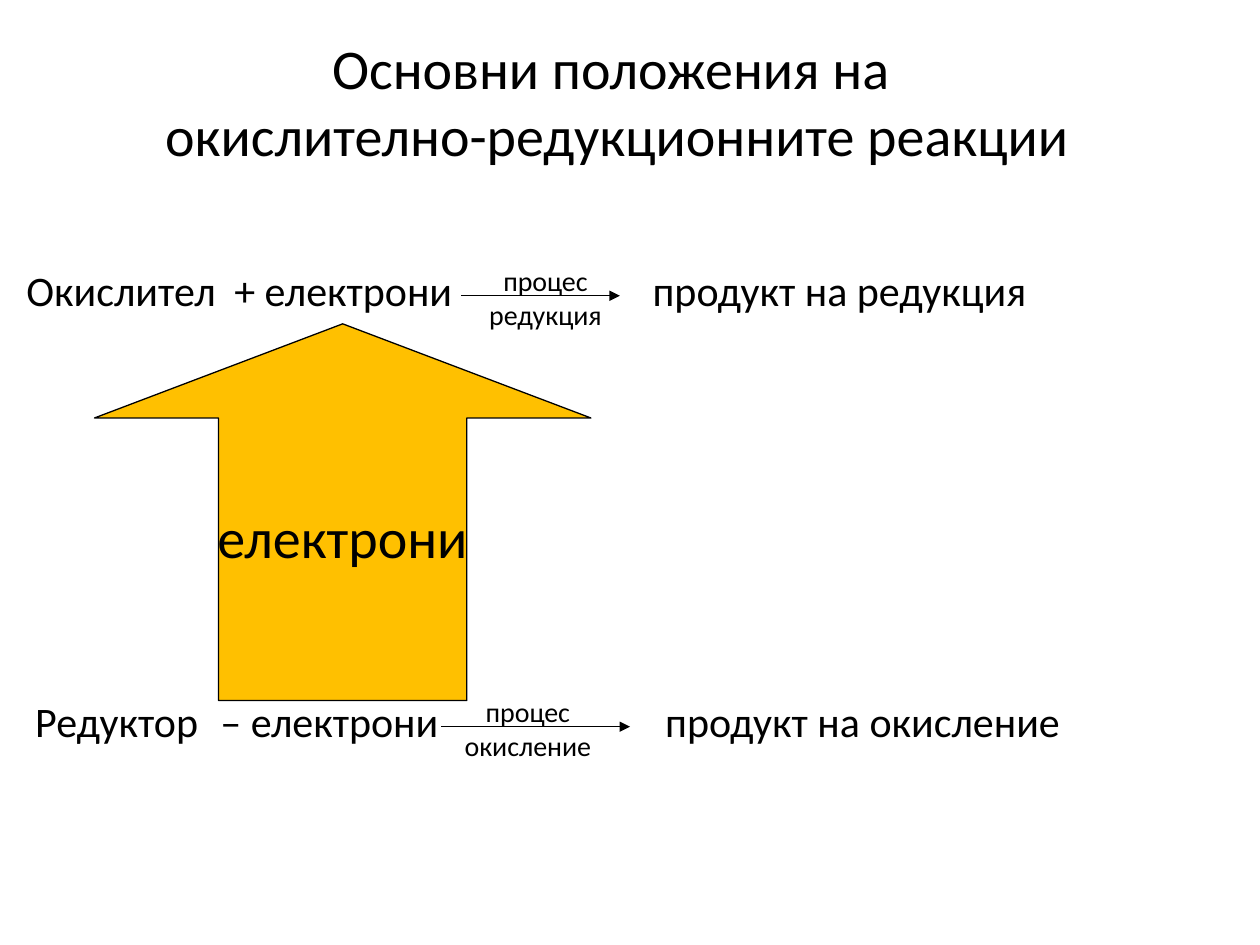
from lxml import etree
from pptx import Presentation
from pptx.dml.color import RGBColor
from pptx.enum.shapes import MSO_CONNECTOR, MSO_SHAPE
from pptx.enum.text import MSO_ANCHOR, PP_ALIGN
from pptx.oxml.ns import qn
from pptx.util import Inches, Pt

UP_ARROW, STRAIGHT = MSO_SHAPE.UP_ARROW, MSO_CONNECTOR.STRAIGHT
CENTER, LEFT, MIDDLE = PP_ALIGN.CENTER, PP_ALIGN.LEFT, MSO_ANCHOR.MIDDLE
COLORS = {"text": "000000", "line": "000000", "arrow": "FFC000"}
FONT = "Calibri"
WIDTH, HEIGHT = Inches(10), Inches(7.5)
COLS, ROWS = 100, 75


def rgb(name):
    """Return a named colour."""
    return RGBColor.from_string(COLORS[name])


def x(cols):
    """Turn grid columns into a length."""
    return round(WIDTH * cols / COLS)


def y(rows):
    """Turn grid rows into a length."""
    return round(HEIGHT * rows / ROWS)


def place(box):
    """Turn a left, top, width, height grid box into lengths."""
    left, top, width, height = box
    return x(left), y(top), x(width), y(height)


def write(shape, lines, size, align=CENTER, wrap=True, tabs=()):
    """Fill a shape with one paragraph per line, centred vertically."""
    tf = shape.text_frame
    frame = {"word_wrap": wrap, "vertical_anchor": MIDDLE, "margin_left": 0,
             "margin_right": 0, "margin_top": 0, "margin_bottom": 0}
    for key, value in frame.items():
        setattr(tf, key, value)
    for i, line in enumerate(lines):
        p = tf.add_paragraph() if i else tf.paragraphs[0]
        p.alignment = align
        if tabs:
            stops = etree.SubElement(p._p.get_or_add_pPr(), qn("a:tabLst"))
            for tab in tabs:
                etree.SubElement(stops, qn("a:tab"), pos=str(x(tab)), algn="l")
        p.text = line
        for r in p.runs:
            for key, value in {"name": FONT, "size": Pt(size)}.items():
                setattr(r.font, key, value)
            r.font.color.rgb = rgb("text")


def outline(shape):
    """Give a shape or connector its thin line."""
    shape.line.color.rgb = rgb("line")
    shape.line.width = Pt(0.75)


def add_title(s, box):
    """Place the two-line title."""
    write(s.shapes.add_textbox(*place(box)),
          ["Основни положения на ", "окислително-редукционните реакции"], 32)


def add_electron_arrow(s, box):
    """Place the block arrow of the electron flow."""
    arrow = s.shapes.add_shape(UP_ARROW, *place(box))
    arrow.shadow.inherit = False
    arrow.fill.solid()
    arrow.fill.fore_color.rgb = rgb("arrow")
    outline(arrow)
    arrow.adjustments[0], arrow.adjustments[1] = 0.5, 0.25
    write(arrow, ["електрони"], 32, wrap=False)


def add_reaction(s, box, parts, tabs, process, label, arrow):
    """Place a tabbed equation with a labelled reaction arrow."""
    left, top, width, height = box
    write(s.shapes.add_textbox(*place(box)), ["\t".join(parts)], 24, LEFT, tabs=tabs)
    label_left, label_width = label
    label_box = (left + label_left, top + 0.1 * height, label_width, height)
    write(s.shapes.add_textbox(*place(label_box)), ["процес", process], 16)
    start, end = (x(left + col) for col in arrow)
    level = y(top + 0.58 * height)
    line = s.shapes.add_connector(STRAIGHT, start, level, end, level)
    outline(line)
    etree.SubElement(line.line._get_or_add_ln(), qn("a:tailEnd"), type="triangle")
    etree.SubElement(line._element.spPr, qn("a:effectLst"))


def main():
    """Build the slide of redox reactions."""
    prs = Presentation()
    prs.slide_width, prs.slide_height = WIDTH, HEIGHT
    s = prs.slides.add_slide(prs.slide_layouts[6])
    add_reaction(s, (2.1, 20, 85, 6),
                 ("Окислител", "+ електрони", "продукт на редукция"),
                 (16.5, 49.7), "редукция", (34.7, 13), (34.5, 47.1))
    add_electron_arrow(s, (7.5, 25.7, 39.4, 29.9))
    add_reaction(s, (2.8, 54.2, 85, 6),
                 ("Редуктор", "– електрони", "продукт на окисление"),
                 (14.7, 50), "окисление", (32.6, 13), (32.2, 47.2))
    add_title(s, (0, 2.1, 98, 11.8))
    prs.save("out.pptx")


if __name__ == "__main__":
    main()
